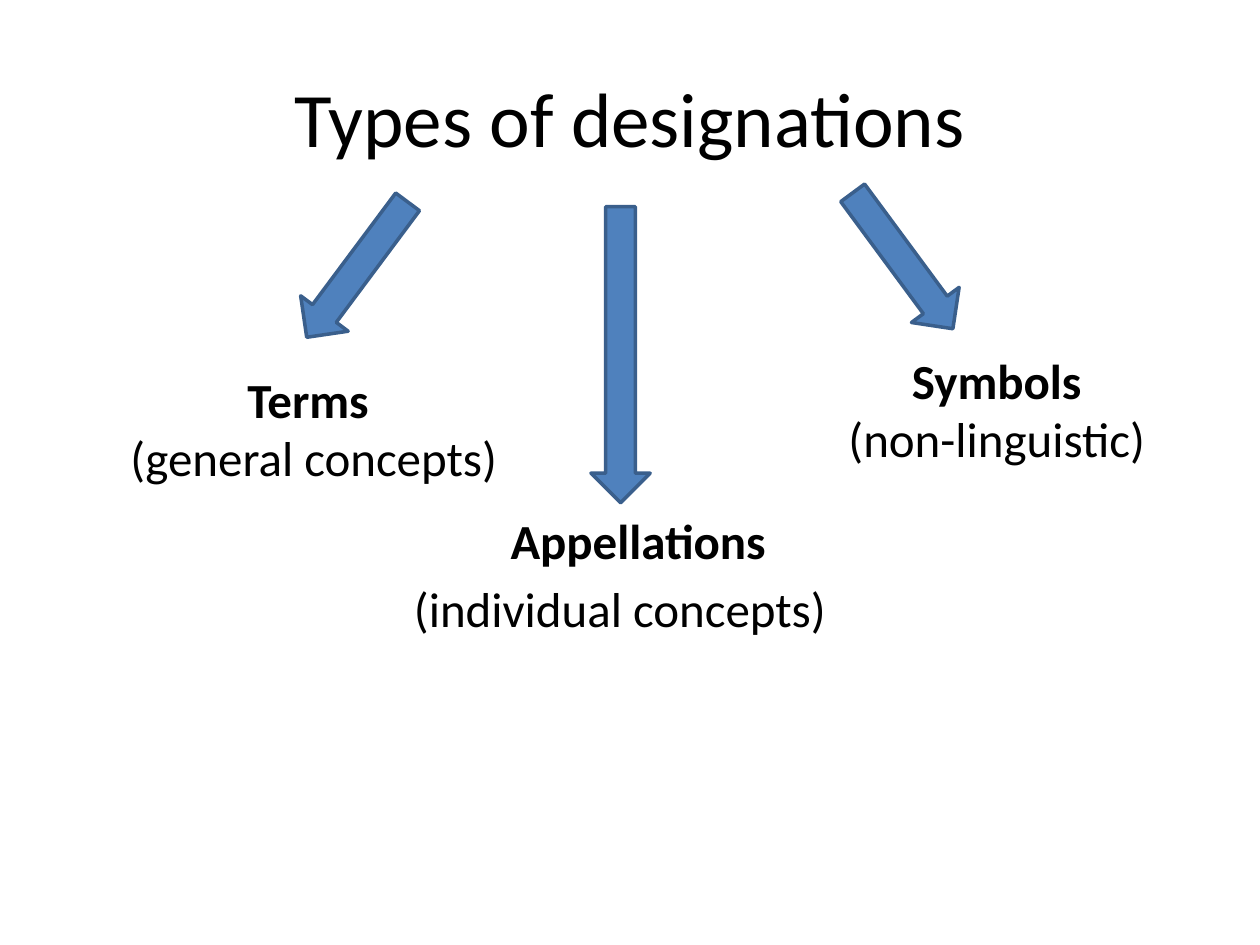
from pptx import Presentation
from pptx.dml.color import RGBColor
from pptx.enum.shapes import MSO_SHAPE as Shape
from pptx.enum.text import MSO_ANCHOR as Anchor, PP_ALIGN as Align
from pptx.util import Inches, Pt

BLACK = RGBColor(0x00, 0x00, 0x00)
BLUE = RGBColor(0x4F, 0x81, 0xBD)
NAVY = RGBColor(0x3A, 0x5F, 0x8C)


def add_text(slide, box, lines, size, anchor=Anchor.TOP, gap=0):
    frame = slide.shapes.add_textbox(*map(Inches, box)).text_frame
    frame.word_wrap = True
    frame.vertical_anchor = anchor
    for i, (text, bold, shift) in enumerate(lines):
        para = frame.add_paragraph() if i else frame.paragraphs[0]
        para.alignment = Align.CENTER
        para.space_before = Pt(gap)
        if shift:
            para._p.get_or_add_pPr().set("marL", str(Inches(shift)))
        run = para.add_run()
        run.text = text
        look = {"name": "Calibri", "size": Pt(size), "bold": bold}
        for key, value in look.items():
            setattr(run.font, key, value)
        run.font.color.rgb = BLACK


def add_title(slide, box, text):
    add_text(slide, box, [(text, False, 0)], 44, Anchor.MIDDLE)


def add_label(slide, box, name, note, shifts=(0, 0), gap=0):
    lines = [(name, True, shifts[0]), (note, False, shifts[1])]
    add_text(slide, box, lines, 28, gap=gap)


def add_arrow(slide, box, angle):
    arrow = slide.shapes.add_shape(Shape.DOWN_ARROW, *map(Inches, box))
    arrow.rotation = angle
    arrow.shadow.inherit = False
    arrow.fill.solid()
    arrow.fill.fore_color.rgb = BLUE
    arrow.line.color.rgb = NAVY
    arrow.line.width = Pt(2)


def main():
    deck = Presentation()
    deck.slide_width, deck.slide_height = Inches(10), Inches(7.5)
    slide = deck.slides.add_slide(deck.slide_layouts[6])
    add_title(slide, (0.5, 0.3, 9, 1.25), "Types of designations")
    add_label(slide, (1.49, 4, 6.86, 1.42), "Appellations",
              "(individual concepts)", shifts=(0.29, 0), gap=5.6)
    arrows = [
        ((2.6, 1.47, 0.47, 1.34), 36.7),
        ((4.69, 1.64, 0.47, 2.35), 0),
        ((6.93, 1.4, 0.47, 1.34), 323.6),
    ]
    for box, angle in arrows:
        add_arrow(slide, box, angle)
    add_label(slide, (6.57, 2.73, 2.68, 1.04), "Symbols", "(non-linguistic)")
    add_label(slide, (0.2, 2.88, 4.49, 1.04), "Terms",
              "(general concepts)", shifts=(0, 0.09))
    deck.save("out.pptx")


if __name__ == "__main__":
    main()
